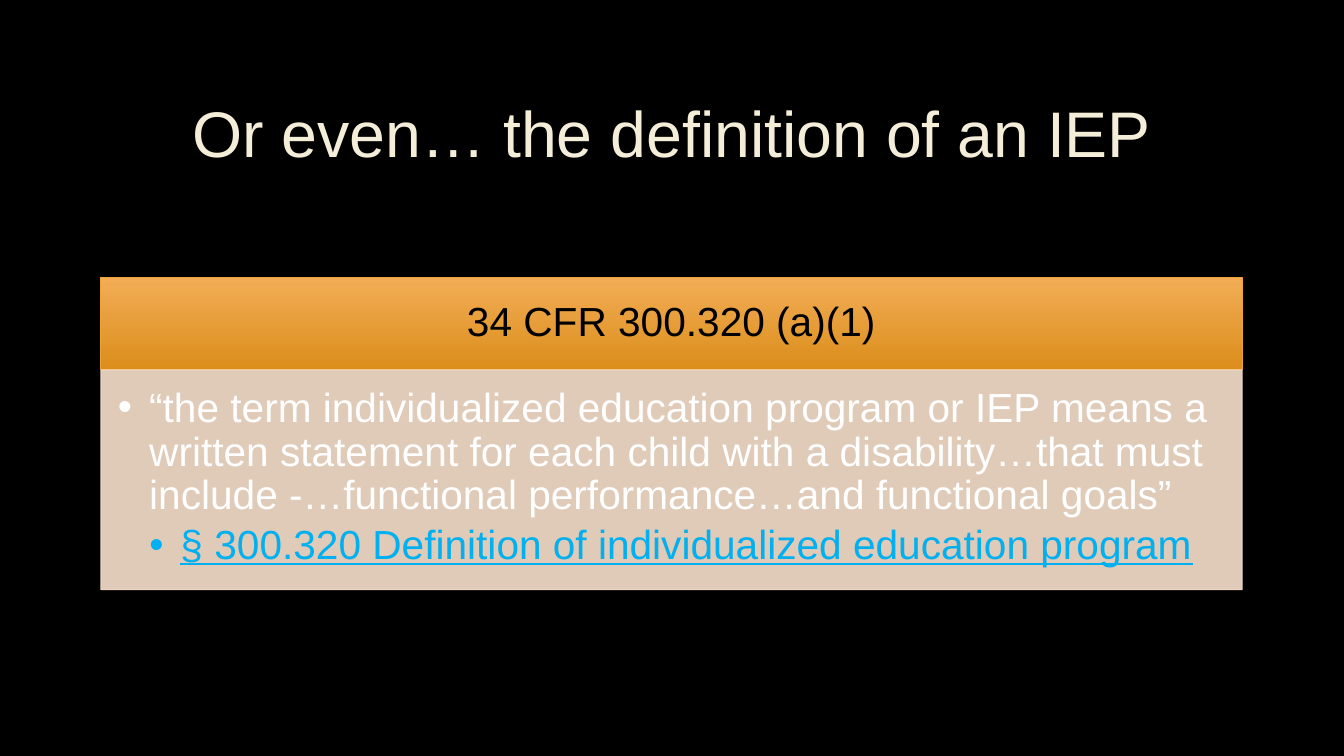
from dataclasses import dataclass

from lxml.etree import SubElement
from pptx import Presentation
from pptx.dml.color import RGBColor as Color
from pptx.enum.shapes import MSO_SHAPE as Shape
from pptx.enum.text import MSO_ANCHOR as Anchor, PP_ALIGN as Align
from pptx.oxml.ns import qn
from pptx.util import Inches, Pt


@dataclass(frozen=True)
class Theme:
    """Colours, font and type sizes of the deck."""
    background: str = "000000"
    title: str = "F4EDD8"
    header_top: str = "F2AD56"
    header_bottom: str = "DB8E1B"
    header_line: str = "F0A22E"
    header_text: str = "000000"
    body: str = "F9E0CD"
    body_text: str = "FFFFFF"
    link: str = "00B0F0"
    font: str = "Arial"
    title_size: float = 46
    text_size: float = 29
    line_width: float = 0.75
    body_opacity: int = 90


THEME = Theme()


def rgb(value):
    """Turn a hex string into a colour."""
    return Color.from_string(value)


def set_frame(frame, anchor, insets):
    """Set wrapping, anchor and left, top, right, bottom insets."""
    frame.word_wrap = True
    frame.vertical_anchor = anchor
    (frame.margin_left, frame.margin_top,
     frame.margin_right, frame.margin_bottom) = map(Inches, insets)


def write(para, text, size, color, align=Align.LEFT, underline=None):
    """Write one styled run into a paragraph."""
    para.alignment = align
    para.line_spacing = 0.9
    span = para.add_run()
    span.text = text
    span.font.name = THEME.font
    span.font.size = Pt(size)
    span.font.color.rgb = rgb(color)
    span.font.underline = underline


def set_bullet(para, level):
    """Give a paragraph a hanging bullet at the given level."""
    hang = Inches(0.31)
    para.level = level
    props = para._p.get_or_add_pPr()
    props.set("marL", str(hang * level))
    props.set("indent", str(-hang))
    SubElement(props, qn("a:buFont")).set("typeface", THEME.font)
    SubElement(props, qn("a:buChar")).set("char", "•")


def set_opacity(shape, percent):
    """Make the fill and line colours of a shape partly transparent."""
    for color in shape._element.spPr.iter(qn("a:srgbClr")):
        SubElement(color, qn("a:alpha")).set("val", str(percent * 1000))


def add_panel(page, box, line_color):
    """Add an outlined rectangle without a shadow."""
    panel = page.shapes.add_shape(Shape.RECTANGLE, *map(Inches, box))
    panel.shadow.inherit = False
    panel.line.color.rgb = rgb(line_color)
    panel.line.width = Pt(THEME.line_width)
    return panel


def add_title(page, box, text):
    """Add the centred slide title."""
    frame = page.shapes.add_textbox(*map(Inches, box)).text_frame
    set_frame(frame, Anchor.MIDDLE, (0.1, 0.05, 0.1, 0.05))
    write(frame.paragraphs[0], text, THEME.title_size, THEME.title, Align.CENTER)


def add_header(page, box, text):
    """Add the gradient header band of the card."""
    panel = add_panel(page, box, THEME.header_line)
    panel.fill.gradient()
    panel.fill.gradient_angle = 270
    for stop, color in zip(panel.fill.gradient_stops,
                           (THEME.header_top, THEME.header_bottom)):
        stop.color.rgb = rgb(color)
    set_frame(panel.text_frame, Anchor.MIDDLE, (0.23, 0.13, 0.23, 0.13))
    write(panel.text_frame.paragraphs[0], text, THEME.text_size,
          THEME.header_text, Align.CENTER)


def add_body(page, box, quote, link):
    """Add the card body with the quote and its underlined reference."""
    panel = add_panel(page, box, THEME.body)
    panel.fill.solid()
    panel.fill.fore_color.rgb = rgb(THEME.body)
    set_opacity(panel, THEME.body_opacity)
    frame = panel.text_frame
    set_frame(frame, Anchor.TOP, (0.17, 0.17, 0.23, 0.25))
    items = ((quote, THEME.body_text, None), (link, THEME.link, True))
    for level, (text, color, underline) in enumerate(items, start=1):
        para = frame.paragraphs[0] if level == 1 else frame.add_paragraph()
        write(para, text, THEME.text_size, color, underline=underline)
        para.space_after = Pt(THEME.text_size * 0.15)
        set_bullet(para, level)


def add_card(page, box, header, quote, link):
    """Stack the header band and the body inside the box."""
    left, top, width, height = box
    band = 0.92
    add_header(page, (left, top, width, band), header)
    add_body(page, (left, top + band, width, height - band), quote, link)


def main():
    """Build the deck and save it."""
    deck = Presentation()
    deck.slide_width, deck.slide_height = Inches(13.33), Inches(7.5)
    page = deck.slides.add_slide(deck.slide_layouts[6])
    page.background.fill.solid()
    page.background.fill.fore_color.rgb = rgb(THEME.background)
    left, width = 1, 11.32
    add_title(page, (left, 0.67, width, 1.38), "Or even… the definition of an IEP")
    add_card(
        page, (left, 2.75, width, 3.1), "34 CFR 300.320 (a)(1)",
        "“the term individualized education program or IEP means a written "
        "statement for each child with a disability…that must include "
        "-…functional performance…and functional goals”",
        "§ 300.320 Definition of individualized education program")
    deck.save("out.pptx")


if __name__ == "__main__":
    main()
